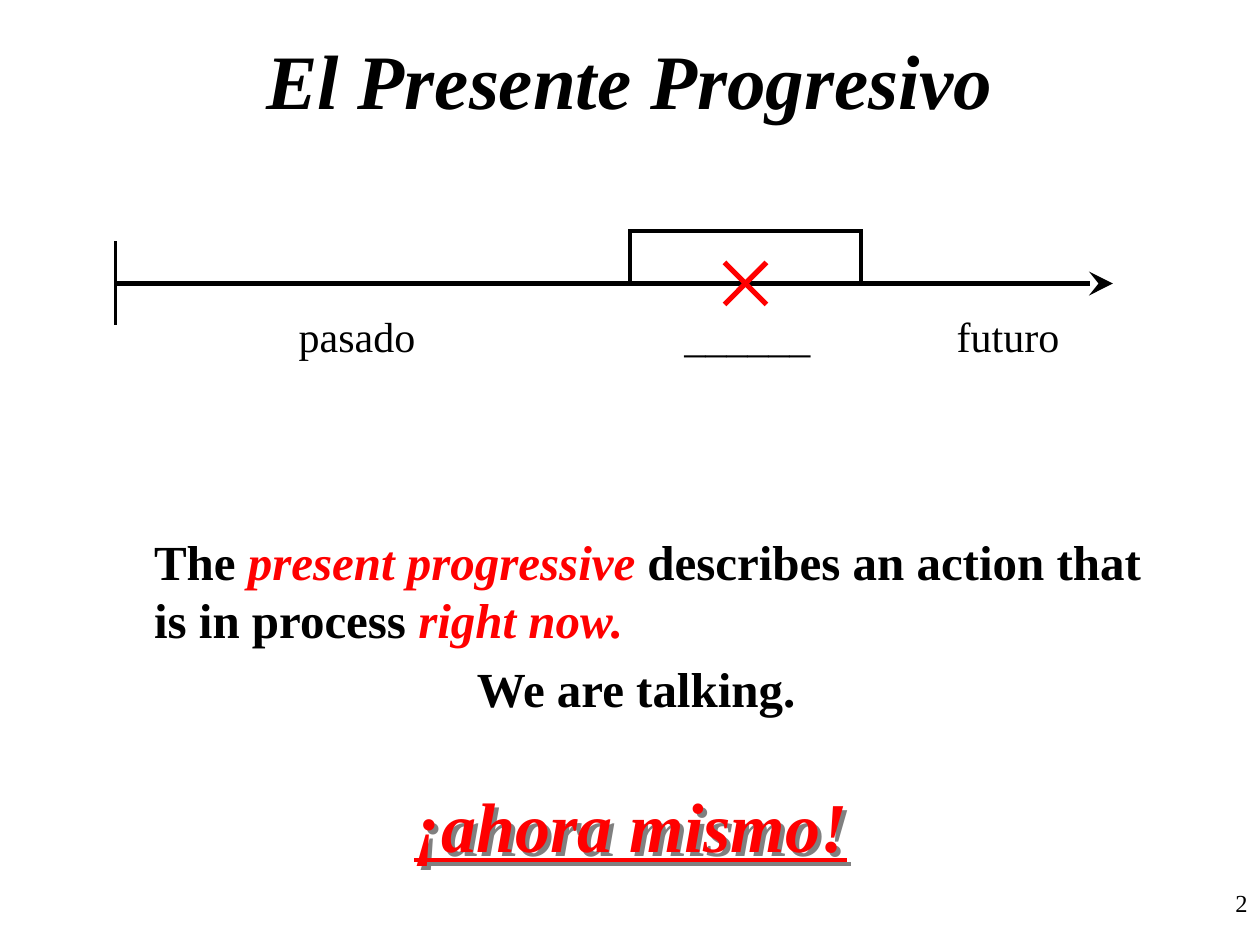
from dataclasses import dataclass

from lxml import etree
from pptx import Presentation
from pptx import util as u
from pptx.dml.color import RGBColor
from pptx.enum import shapes, text
from pptx.oxml.ns import qn

Pt = u.Pt


@dataclass(frozen=True)
class Theme:
    font: str = "Times New Roman"
    ink: RGBColor = RGBColor(0, 0, 0)
    accent: RGBColor = RGBColor(255, 0, 0)
    shadow: str = "808080"
    title: int = 44
    callout: int = 40
    body: int = 28
    label: int = 24
    number: int = 14


THEME = Theme()
ALIGN = text.PP_ALIGN


def format_run(run, size, color=THEME.ink, bold=False, italic=False):
    font = run.font
    font.name, font.size = THEME.font, Pt(size)
    font.bold, font.italic = bold, italic
    font.color.rgb = color


def add_text(slide, box, content, size, align=ALIGN.CENTER, wrap=False, **style):
    """Place a one-line text box and return its shape."""
    shape = slide.shapes.add_textbox(*map(Pt, box))
    frame = shape.text_frame
    frame.text = content
    frame.word_wrap = wrap
    paragraph = frame.paragraphs[0]
    paragraph.alignment = align
    format_run(paragraph.runs[0], size, **style)
    return shape


def add_line(group, start, end, color, width):
    line = group.shapes.add_connector(
        shapes.MSO_CONNECTOR.STRAIGHT, *map(Pt, start + end))
    line.line.color.rgb = color
    line.line.width = Pt(width)
    etree.SubElement(line._element.spPr, qn("a:effectLst"))
    return line


def add_title(slide, box):
    title = slide.shapes.title
    title.left, title.top, title.width, title.height = map(Pt, box)
    frame = title.text_frame
    frame.text = "El Presente Progresivo"
    frame.auto_size = text.MSO_AUTO_SIZE.NONE
    frame.vertical_anchor = text.MSO_ANCHOR.MIDDLE
    frame.paragraphs[0].alignment = ALIGN.CENTER
    format_run(frame.paragraphs[0].runs[0], THEME.title, bold=True, italic=True)


def add_timeline(slide, box):
    left, top, width, height = box
    axis = top + 30

    # Axis, start tick and the box for the present
    group = slide.shapes.add_group_shape()
    arrow = add_line(group, (left, axis), (left + width, axis), THEME.ink, 2.75)
    etree.SubElement(arrow.line._get_or_add_ln(), qn("a:tailEnd"),
                     type="stealth", w="lg", len="lg")
    add_line(group, (left, axis - 24), (left, axis + 24), THEME.ink, 2.25)
    present = group.shapes.add_shape(
        shapes.MSO_SHAPE.RECTANGLE, Pt(left + 294), Pt(top), Pt(132), Pt(30))
    present.shadow.inherit = False
    present.fill.background()
    present.line.color.rgb = THEME.ink
    present.line.width = Pt(2.25)
    etree.SubElement(present.line._get_or_add_ln(), qn("a:miter"), lim="800000")

    # Cross in the middle of the present
    cross = slide.shapes.add_group_shape()
    center, arm = left + 360, 12
    for rise in (arm, -arm):
        add_line(cross, (center - arm, axis + rise), (center + arm, axis - rise),
                 THEME.accent, 3)

    # Labels, centred below their stretch of time
    for label, middle, label_width in (
            ("pasado", 138, 82), ("______", 361, 90), ("futuro", 510, 74)):
        add_text(slide, (left + middle - label_width / 2, top + height - 36,
                         label_width, 36), label, THEME.label)


def add_definition(slide, box):
    frame = slide.shapes.add_textbox(*map(Pt, box)).text_frame
    frame.word_wrap = True
    definition, example = frame.paragraphs[0], frame.add_paragraph()
    for paragraph, indent in ((definition, 27), (example, 7)):
        paragraph._p.get_or_add_pPr().set("marL", str(Pt(indent)))
    for content, stressed in (("The ", False), ("present progressive", True),
                              (" describes an action that is in process ", False),
                              ("right now.", True)):
        run = definition.add_run()
        run.text = content
        format_run(run, THEME.body, THEME.accent if stressed else THEME.ink,
                   bold=True, italic=stressed)
    example.text = "We are talking."
    example.alignment = ALIGN.CENTER
    example.space_before = Pt(5.6)
    format_run(example.runs[0], THEME.body, bold=True)


def add_callout(slide, box):
    callout = add_text(slide, box, "¡ahora mismo!", THEME.callout,
                       color=THEME.accent, bold=True, italic=True)
    callout.text_frame.paragraphs[0].runs[0].font.underline = True
    # The box has no fill, so its shadow falls from the letters
    effects = etree.SubElement(callout._element.spPr, qn("a:effectLst"))
    shadow = etree.SubElement(effects, qn("a:outerShdw"), blurRad="0",
                              dist=str(Pt(3.2)), dir="2700000", algn="tl")
    etree.SubElement(shadow, qn("a:srgbClr"), val=THEME.shadow)


def main():
    presentation = Presentation()
    presentation.slide_width, presentation.slide_height = Pt(720), Pt(540)
    slide = presentation.slides.add_slide(presentation.slide_layouts[5])
    add_title(slide, (54, 0, 612, 90))
    add_timeline(slide, (66, 132, 570, 78))
    add_definition(slide, (54, 300, 612, 108))
    add_callout(slide, (228.5, 443.5, 264, 55.5))
    add_text(slide, (606, 504, 114, 24), "2", THEME.number, ALIGN.RIGHT, wrap=True)
    presentation.save("out.pptx")


if __name__ == "__main__":
    main()
